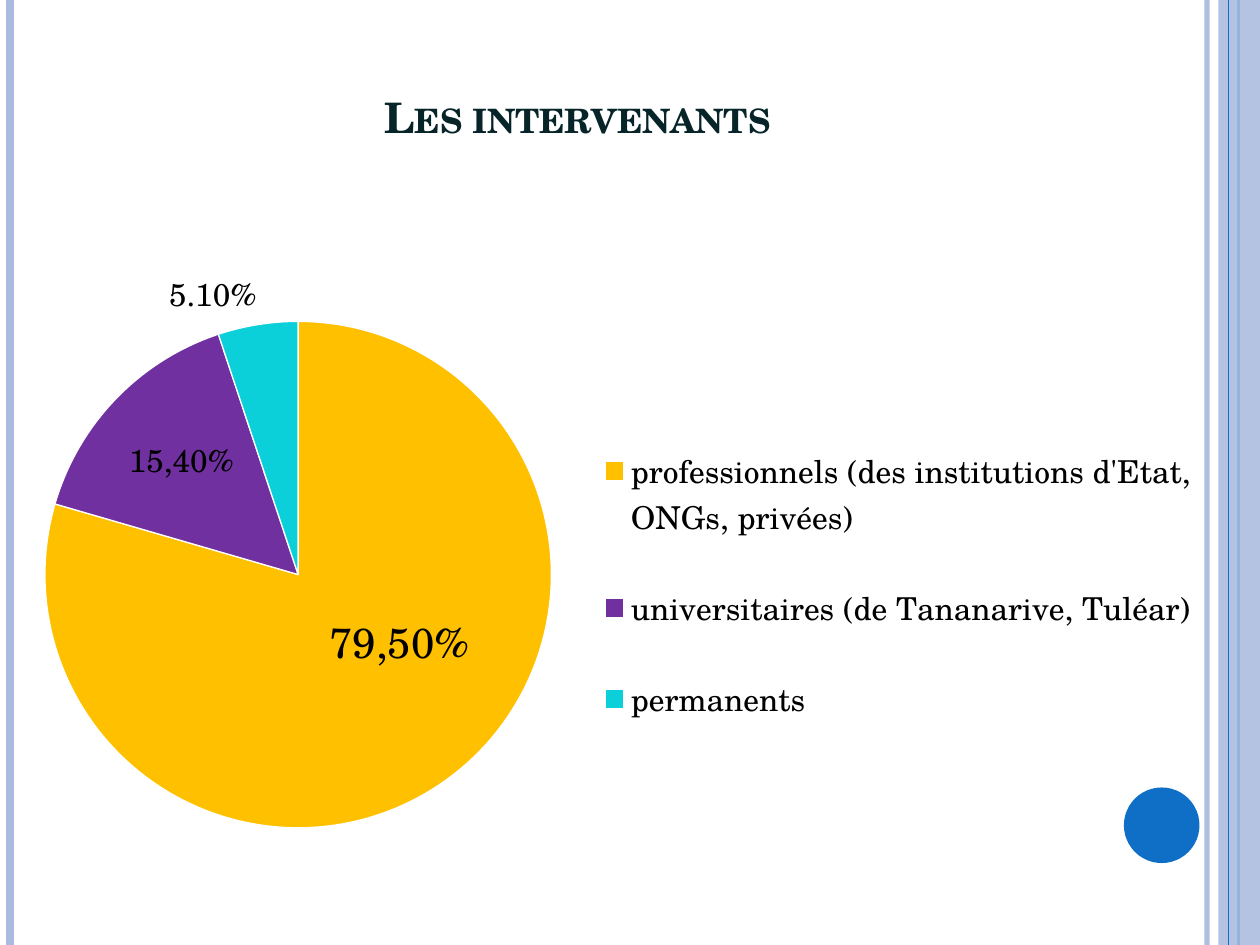
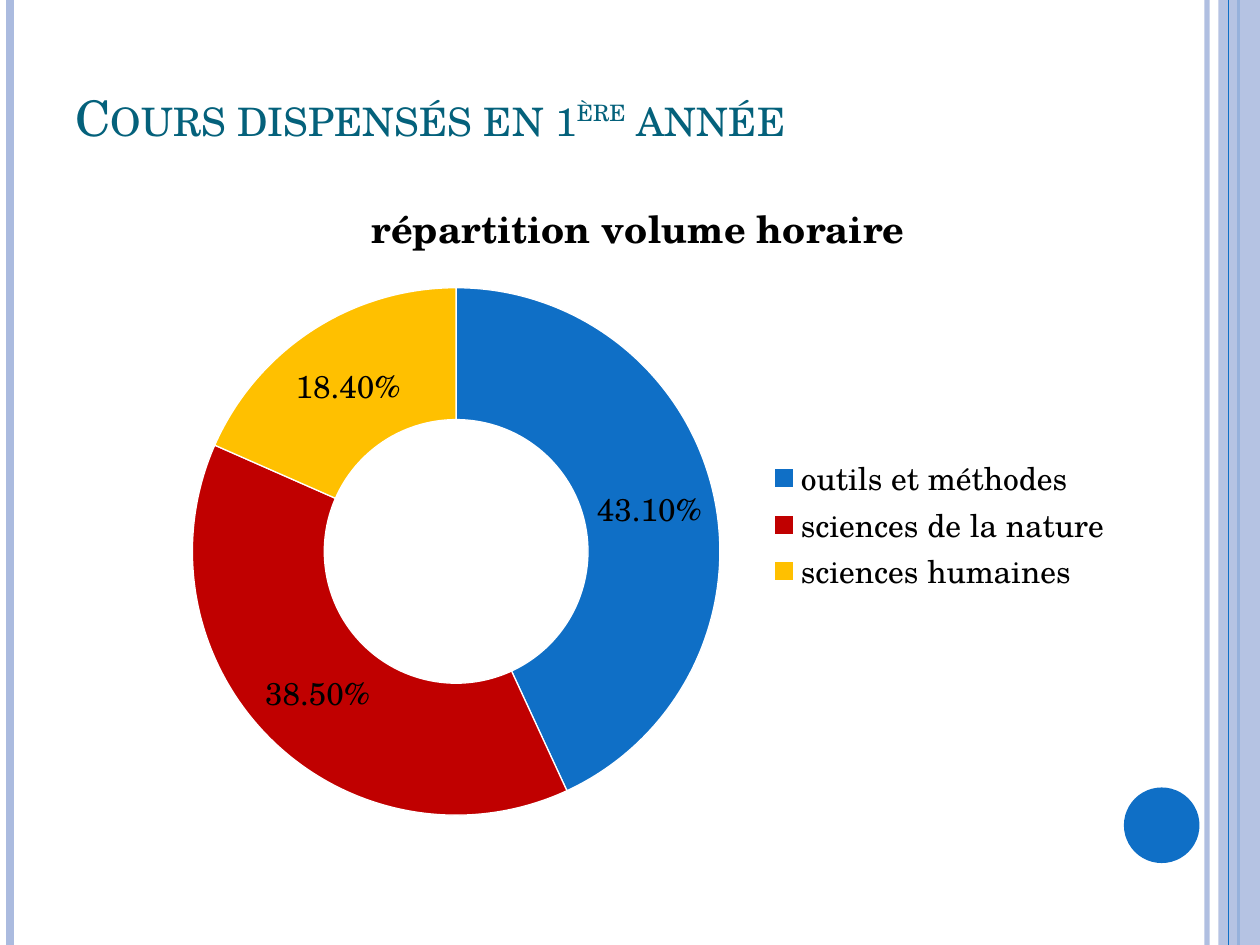
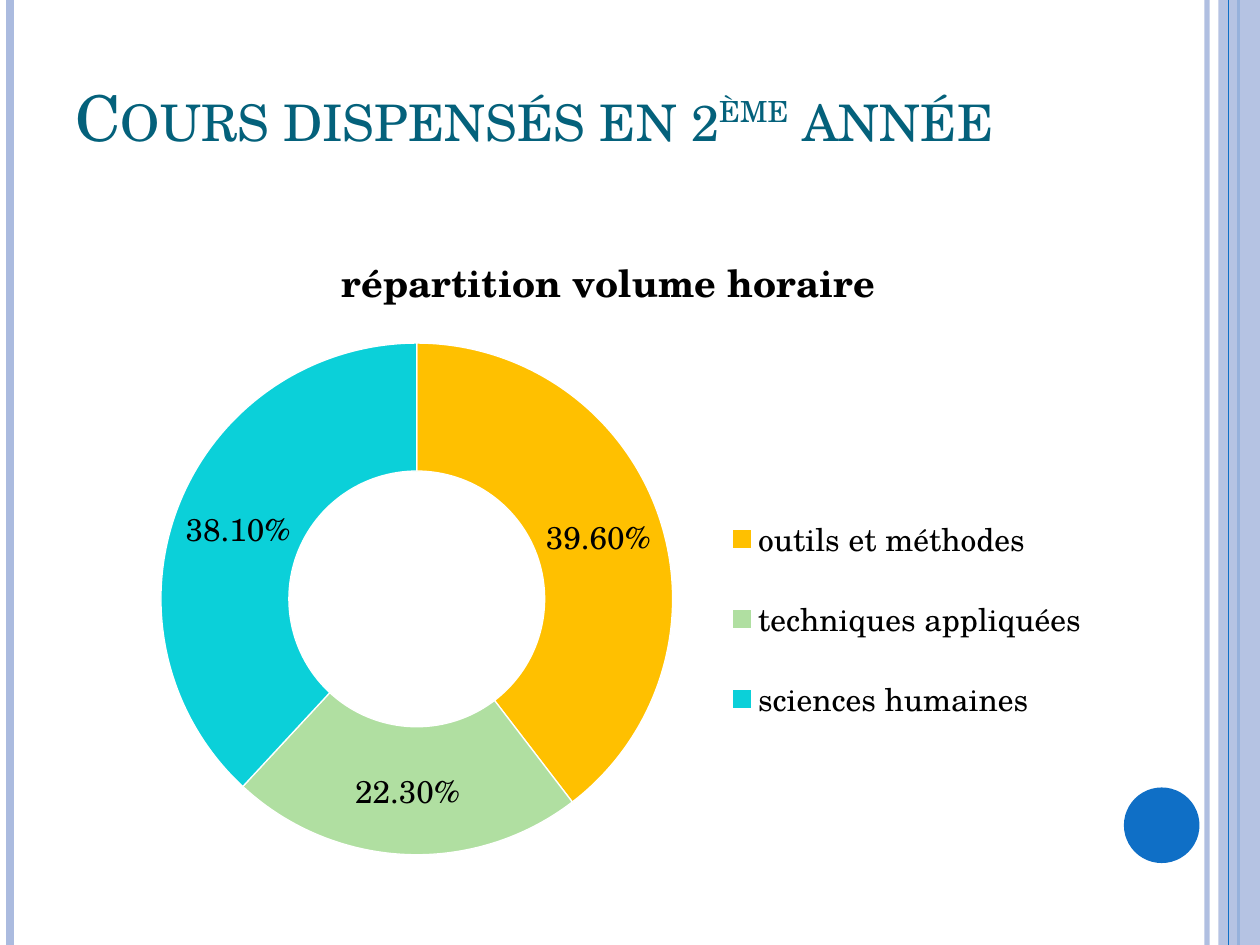
from pptx import Presentation, util as u
from pptx.chart.data import CategoryChartData
from pptx.dml.color import RGBColor
from pptx.enum import chart as charts, shapes, text
from pptx.oxml.ns import qn
from lxml import etree

FONT = "TeX Gyre Schola"
COLORS = {
    "band": "ABBBDF", "blue": "0F6FC6", "ink": "072428", "teal": "04617B",
    "black": "000000", "white": "FFFFFF", "gold": "FFC000", "red": "C00000",
    "purple": "7030A0", "cyan": "0BD0D9", "green": "B0DFA1",
}
COLUMNS, ROWS = 100, 75
CELL = u.Inches(0.1)
TITLE_BOX = (5, 3, 81.7, 12.5)
DISC_BOX = (89.2, 62.5, 6, 6)
BAND_BOX = (96.7, 0, 3.3, ROWS)
HOURS_TITLE = " répartition volume horaire"


def grid(*lengths):
    return [round(length * CELL) for length in lengths]


def color(name):
    return RGBColor.from_string(COLORS[name])


def set_alpha(shape, percent):
    for tint in shape._element.spPr.iter(qn("a:srgbClr")):
        etree.SubElement(tint, qn("a:alpha")).set("val", str(percent * 1000))


def add_rule(page, column, name, width):
    """Draw a full-height vertical line."""
    x, top, bottom = grid(column, 0, ROWS)
    rule = page.shapes.add_connector(
        shapes.MSO_CONNECTOR.STRAIGHT, x, top, x, bottom)
    rule.line.color.rgb = color(name)
    rule.line.width = u.Pt(width)
    etree.SubElement(rule._element.spPr, qn("a:effectLst"))
    return rule


def add_solid(page, kind, box, name):
    shape = page.shapes.add_shape(kind, *grid(*box))
    shape.shadow.inherit = False
    shape.fill.solid()
    shape.fill.fore_color.rgb = color(name)
    shape.line.fill.background()
    return shape


def add_frame(page):
    """Draw the side rules, the right band and the disc."""
    set_alpha(add_rule(page, 95.8, "band", 3), 93)
    add_rule(page, 0.8, "band", 4.5)
    add_rule(page, 98.3, "blue", 1.5)
    set_alpha(add_solid(page, shapes.MSO_SHAPE.RECTANGLE, BAND_BOX, "band"), 87)
    add_rule(page, 97.5, "blue", 0.75)
    add_solid(page, shapes.MSO_SHAPE.OVAL, DISC_BOX, "blue")


def add_title(page, parts, size, name="teal", centred=False):
    """Write the small-caps title; every second part is superscript."""
    frame = page.shapes.add_textbox(*grid(*TITLE_BOX)).text_frame
    frame.word_wrap = True
    frame.vertical_anchor = text.MSO_ANCHOR.MIDDLE
    para = frame.paragraphs[0]
    para.alignment = text.PP_ALIGN.CENTER if centred else text.PP_ALIGN.LEFT
    for index, part in enumerate(parts):
        span = para.add_run()
        span.text = part
        span.font.name, span.font.size = FONT, u.Pt(size)
        span.font.bold = centred
        span.font.color.rgb = color(name)
        props = span._r.get_or_add_rPr()
        props.set("cap", "small")
        if index % 2:
            props.set("baseline", "30000")


def set_layout(element, x, y, w=None, h=None, edge=True, inner=False):
    """Place a chart part by shares of the chart's size."""
    for old in element.findall(qn("c:layout")):
        element.remove(old)
    layout = etree.Element(qn("c:layout"))
    manual = etree.SubElement(layout, qn("c:manualLayout"))
    settings = [("layoutTarget", "inner")] if inner else []
    if edge:
        settings += [("xMode", "edge"), ("yMode", "edge")]
    settings += [("x", x), ("y", y), ("w", w), ("h", h)]
    for tag, value in settings:
        if value is not None:
            etree.SubElement(manual, qn("c:" + tag)).set("val", str(value))
    element.insert(0 if inner else 1, layout)


def add_ring(page, kind, box, slices, plot_box, legend_box):
    """Add a pie or doughnut of (category, value, colour) slices."""
    data = CategoryChartData(number_format="0.00%")
    data.categories = [category for category, _, _ in slices]
    data.add_series("Series 1", [value for _, value, _ in slices])
    chart = page.shapes.add_chart(kind, *grid(*box), data).chart
    chart.font.name, chart.font.size = FONT, u.Pt(18)
    chart.font.color.rgb = color("black")
    chart.has_title = False

    chart.has_legend = True
    chart.legend.position = charts.XL_LEGEND_POSITION.RIGHT
    chart.legend.include_in_layout = False
    set_layout(chart.legend._element, *legend_box)

    plot = chart.plots[0]
    plot.vary_by_categories = True
    set_layout(plot._element.getparent(), *plot_box, inner=True)
    series = plot.series[0]
    labels = series.data_labels
    labels.show_value, labels.show_percentage = True, False
    labels.number_format, labels.number_format_is_linked = "0.00%", False

    for index, (_, _, name) in enumerate(slices):
        look = series.points[index].format
        look.fill.solid()
        look.fill.fore_color.rgb = color(name)
        look.line.color.rgb = color("white")
        look.line.width = u.Pt(0.75)
    return chart


def label_slice(point, wording, size, shift):
    """Give one pie slice its own label, moved off the slice's centre."""
    label = point.data_label
    para = label.text_frame.paragraphs[0]
    span = para.add_run()
    span.text = wording
    span.font.name, span.font.size = FONT, u.Pt(size)
    span.font.color.rgb = color("black")
    label.position = charts.XL_LABEL_POSITION.CENTER
    set_layout(label._dLbl, *shift, edge=False)


def speakers_page(page):
    add_frame(page)
    add_title(page, ["Les intervenants"], 24, "ink", centred=True)
    chart = add_ring(
        page, charts.XL_CHART_TYPE.PIE, (-4.7, 16.4, 101.3, 53.6),
        [("professionnels (des institutions d'Etat, ONGs, privées)", 0.795, "gold"),
         ("universitaires (de Tananarive, Tuléar)", 0.154, "purple"),
         ("permanents", 0.051, "cyan")],
        (0.06, 0.17, 0.44, 0.75), (0.51, 0.29, 0.48, 0.54))
    series = chart.plots[0].series[0]
    series.data_labels.position = charts.XL_LABEL_POSITION.OUTSIDE_END
    label_slice(series.points[0], "79,50%", 24, (0.02, -0.05))
    label_slice(series.points[1], "15,40%", 18, (-0.02, -0.04))


def hours_page(page, title, size, box, slices, plot_box, legend_box, heading_at):
    """Build a page with the doughnut of one year's teaching hours."""
    add_frame(page)
    add_title(page, title, size)
    chart = add_ring(page, charts.XL_CHART_TYPE.DOUGHNUT, box, slices,
                     plot_box, legend_box)
    chart.has_title = True
    heading = chart.chart_title
    para = heading.text_frame.paragraphs[0]
    span = para.add_run()
    span.text = HOURS_TITLE
    span.font.name, span.font.size, span.font.bold = FONT, u.Pt(21.6), True
    span.font.color.rgb = color("black")
    heading.include_in_layout = False
    set_layout(heading._element, *heading_at)


def main():
    deck = Presentation()
    deck.slide_width, deck.slide_height = grid(COLUMNS, ROWS)
    blank = deck.slide_layouts[6]
    speakers_page(deck.slides.add_slide(blank))
    hours_page(
        deck.slides.add_slide(blank),
        ["Cours dispensés en 1", "ère", " année"], 28, (5.5, 13.3, 90.3, 53),
        [("outils et méthodes", 0.431, "blue"),
         ("sciences de la nature", 0.385, "red"),
         ("sciences humaines", 0.184, "gold")],
        (0.1, 0.18, 0.48, 0.79), (0.61, 0.43, 0.31, 0.21), (0.25, 0.03))
    hours_page(
        deck.slides.add_slide(blank),
        ["Cours dispensés en 2", "ème", " année"], 36, (5, 17.6, 86.4, 53),
        [("outils et méthodes", 0.396, "gold"),
         ("techniques appliquées", 0.223, "green"),
         ("sciences humaines", 0.381, "cyan")],
        (0.09, 0.18, 0.47, 0.77), (0.6, 0.39, 0.35, 0.41), (0.24, 0.03))
    deck.save("out.pptx")


if __name__ == "__main__":
    main()
